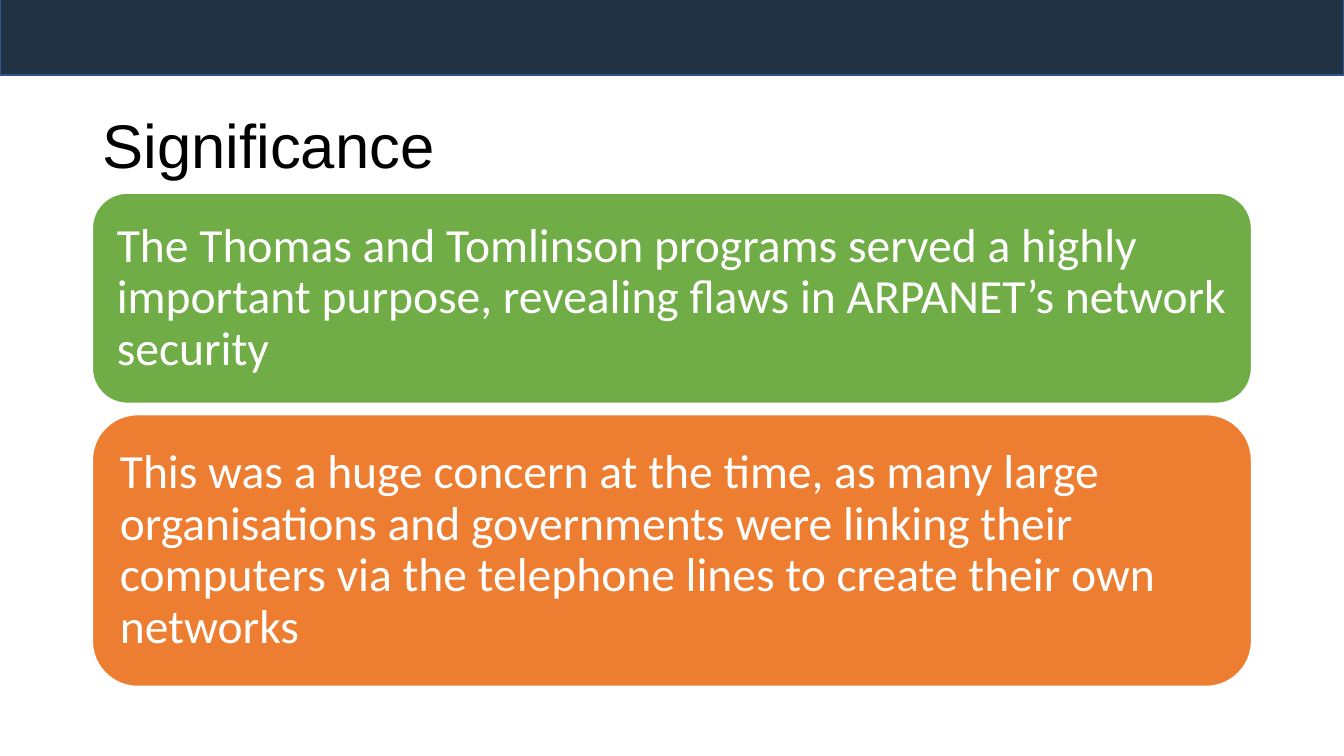
from pptx import Presentation
from pptx.dml.color import RGBColor
from pptx.enum.shapes import MSO_SHAPE
from pptx.enum.text import MSO_ANCHOR, MSO_AUTO_SIZE, PP_ALIGN
from pptx.util import Pt

RECTANGLE, ROUNDED = MSO_SHAPE.RECTANGLE, MSO_SHAPE.ROUNDED_RECTANGLE
MIDDLE, LEFT, NO_FIT = MSO_ANCHOR.MIDDLE, PP_ALIGN.LEFT, MSO_AUTO_SIZE.NONE

NAVY = RGBColor(0x22, 0x33, 0x46)
BLUE = RGBColor(0x32, 0x54, 0x91)
GREEN = RGBColor(0x70, 0xAD, 0x47)
ORANGE = RGBColor(0xED, 0x7D, 0x31)
WHITE = RGBColor(0xFF, 0xFF, 0xFF)
BLACK = RGBColor(0, 0, 0)

SLIDE_WIDTH, SLIDE_HEIGHT = 960, 540
MARGIN, CONTENT_WIDTH = 66, 828
CARD_INSET = 10.2

CARDS = [
    (137.9, 150.2, GREEN,
     "The Thomas and Tomlinson programs served a highly important purpose, "
     "revealing flaws in ARPANET’s network security"),
    (296.2, 194.1, ORANGE,
     "This was a huge concern at the time, as many large organisations and "
     "governments were linking their computers via the telephone lines to "
     "create their own networks"),
]


def add_panel(slide, preset, box, fill, outline):
    panel = slide.shapes.add_shape(preset, *map(Pt, box))
    panel.shadow.inherit = False
    panel.fill.solid()
    panel.fill.fore_color.rgb = fill
    panel.line.color.rgb = outline
    panel.line.width = Pt(1)
    return panel


def write_text(frame, text, font_name, size, color):
    frame.text = text
    for key, value in {"word_wrap": True, "auto_size": NO_FIT,
                       "vertical_anchor": MIDDLE}.items():
        setattr(frame, key, value)
    paragraph = frame.paragraphs[0]
    paragraph.alignment = LEFT
    paragraph.line_spacing = 0.9
    for key, value in {"name": font_name, "size": Pt(size)}.items():
        setattr(paragraph.font, key, value)
    paragraph.font.color.rgb = color


def add_heading(slide, box):
    heading = slide.shapes.title
    for key, value in zip(("left", "top", "width", "height"), box):
        setattr(heading, key, Pt(value))
    write_text(heading.text_frame, "Significance", "Arial", 44, BLACK)


def add_card(slide, box, fill, statement):
    card = add_panel(slide, ROUNDED, box, fill, WHITE)
    frame = card.text_frame
    for side in ("left", "top", "right", "bottom"):
        setattr(frame, f"margin_{side}", Pt(CARD_INSET))
    write_text(frame, statement, "Calibri", 34, WHITE)


def build_significance_slide(presentation):
    slide = presentation.slides.add_slide(presentation.slide_layouts[5])

    # Banner along the top edge
    add_panel(slide, RECTANGLE, (0, -2.4, SLIDE_WIDTH, 56), NAVY, BLUE)

    # Heading
    add_heading(slide, (MARGIN, 54, CONTENT_WIDTH, 104.4))

    # Statement cards
    for top, height, fill, statement in CARDS:
        add_card(slide, (MARGIN, top, CONTENT_WIDTH, height), fill, statement)


def main():
    presentation = Presentation()
    presentation.slide_width = Pt(SLIDE_WIDTH)
    presentation.slide_height = Pt(SLIDE_HEIGHT)
    build_significance_slide(presentation)
    presentation.save("out.pptx")


if __name__ == "__main__":
    main()
